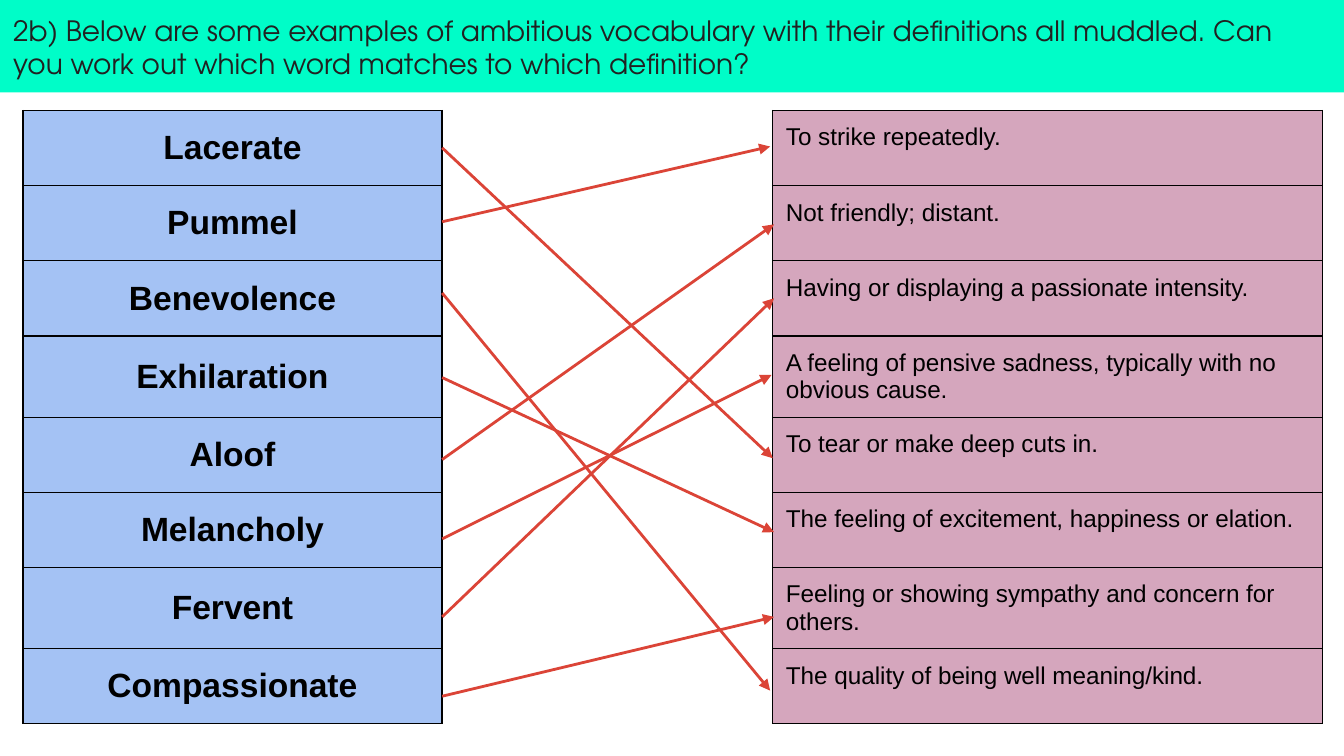
from dataclasses import dataclass

from lxml import etree
from pptx import Presentation
from pptx import util as u
from pptx.dml.color import RGBColor
from pptx.enum import shapes, text
from pptx.oxml import ns


@dataclass(frozen=True)
class Theme:
    banner: str = "00FDC8"
    heading: str = "212121"
    word: str = "A4C2F4"
    meaning: str = "D5A6BD"
    ink: str = "000000"
    arrow: str = "DB4437"
    heading_font: str = "TeX Gyre Adventor"
    body_font: str = "Arial"
    heading_size: float = 15
    word_size: float = 18
    meaning_size: float = 13


theme = Theme()


def write(frame, content, align, font_name, size, bold, color):
    paragraph = frame.paragraphs[0]
    paragraph.alignment = align
    run = paragraph.add_run()
    run.text = content
    for name, value in {"name": font_name, "size": u.Pt(size), "bold": bold}.items():
        setattr(run.font, name, value)
    run.font.color.rgb = RGBColor.from_string(color)


def add_border(cell, side, visible):
    line = etree.SubElement(cell._tc.get_or_add_tcPr(), ns.qn(f"a:ln{side}"), w=str(u.Pt(0.75)))
    if visible:
        fill = etree.SubElement(line, ns.qn("a:solidFill"))
        etree.SubElement(fill, ns.qn("a:srgbClr"), val=theme.ink)
    else:
        etree.SubElement(line, ns.qn("a:noFill"))


presentation = Presentation()
presentation.slide_width = u.Pt(720)
presentation.slide_height = u.Pt(405)
slide = presentation.slides.add_slide(presentation.slide_layouts[6])

banner = slide.shapes.add_shape(shapes.MSO_SHAPE.RECTANGLE, 0, 0, u.Pt(720), u.Pt(49.5))
banner.shadow.inherit = False
banner.fill.solid()
banner.fill.fore_color.rgb = RGBColor.from_string(theme.banner)
banner.line.fill.background()
margins = {f"margin_{side}": u.Pt(7.2) for side in ("left", "top", "right", "bottom")}
banner_format = {**margins, "word_wrap": True, "vertical_anchor": text.MSO_ANCHOR.TOP}
for name, value in banner_format.items():
    setattr(banner.text_frame, name, value)
write(
    banner.text_frame,
    "2b) Below are some examples of ambitious vocabulary with their definitions all muddled. "
    "Can you work out which word matches to which definition?",
    text.PP_ALIGN.LEFT, theme.heading_font, theme.heading_size, False, theme.heading,
)

rows = [
    ("Lacerate", "To strike repeatedly."),
    ("Pummel", "Not friendly; distant."),
    ("Benevolence", "Having or displaying a passionate intensity."),
    ("Exhilaration", "A feeling of pensive sadness, typically with no obvious cause."),
    ("Aloof", "To tear or make deep cuts in."),
    ("Melancholy", "The feeling of excitement, happiness or elation."),
    ("Fervent", "Feeling or showing sympathy and concern for others."),
    ("Compassionate", "The quality of being well meaning/kind."),
]
row_height = 40.3
table = slide.shapes.add_table(
    len(rows), 3, u.Pt(12.3), u.Pt(59.2), u.Pt(696.2), u.Pt(row_height * len(rows))
).table
for name in ("first_row", "horz_banding"):
    setattr(table, name, False)
for column, width in zip(table.columns, (224.5, 177.1, 294.6)):
    column.width = u.Pt(width)

column_styles = [
    (theme.word, text.MSO_ANCHOR.MIDDLE, text.PP_ALIGN.CENTER, theme.word_size, True),
    None,
    (theme.meaning, text.MSO_ANCHOR.TOP, text.PP_ALIGN.LEFT, theme.meaning_size, False),
]
for row_index, (word, meaning) in enumerate(rows):
    table.rows[row_index].height = u.Pt(row_height)
    for column_index, content in enumerate((word, None, meaning)):
        cell = table.cell(row_index, column_index)
        for side in "LRTB":
            add_border(cell, side, content is not None or side in "LR")
        if content is None:
            cell.fill.background()
            continue
        color, anchor, align, size, bold = column_styles[column_index]
        cell.fill.solid()
        cell.fill.fore_color.rgb = RGBColor.from_string(color)
        for name, value in {**margins, "vertical_anchor": anchor}.items():
            setattr(cell, name, value)
        write(cell.text_frame, content, align, theme.body_font, size, bold, theme.ink)

word_edge = 236.9
matches = [
    (79.2, 414, 245.5),
    (118.8, 412.6, 78.5),
    (157, 412.6, 370),
    (202.3, 414.7, 285.1),
    (246.2, 414.7, 120.2),
    (288.7, 413.3, 200.9),
    (330.5, 414.7, 159.8),
    (373, 414.7, 330.5),
]
for word_y, meaning_x, meaning_y in matches:
    arrow = slide.shapes.add_connector(
        shapes.MSO_CONNECTOR.STRAIGHT,
        u.Pt(word_edge), u.Pt(word_y), u.Pt(meaning_x), u.Pt(meaning_y),
    )
    arrow.line.width = u.Pt(1.5)
    arrow.line.color.rgb = RGBColor.from_string(theme.arrow)
    etree.SubElement(arrow.line._get_or_add_ln(), ns.qn("a:tailEnd"), type="triangle")
    etree.SubElement(arrow._element.spPr, ns.qn("a:effectLst"))

presentation.save("out.pptx")
